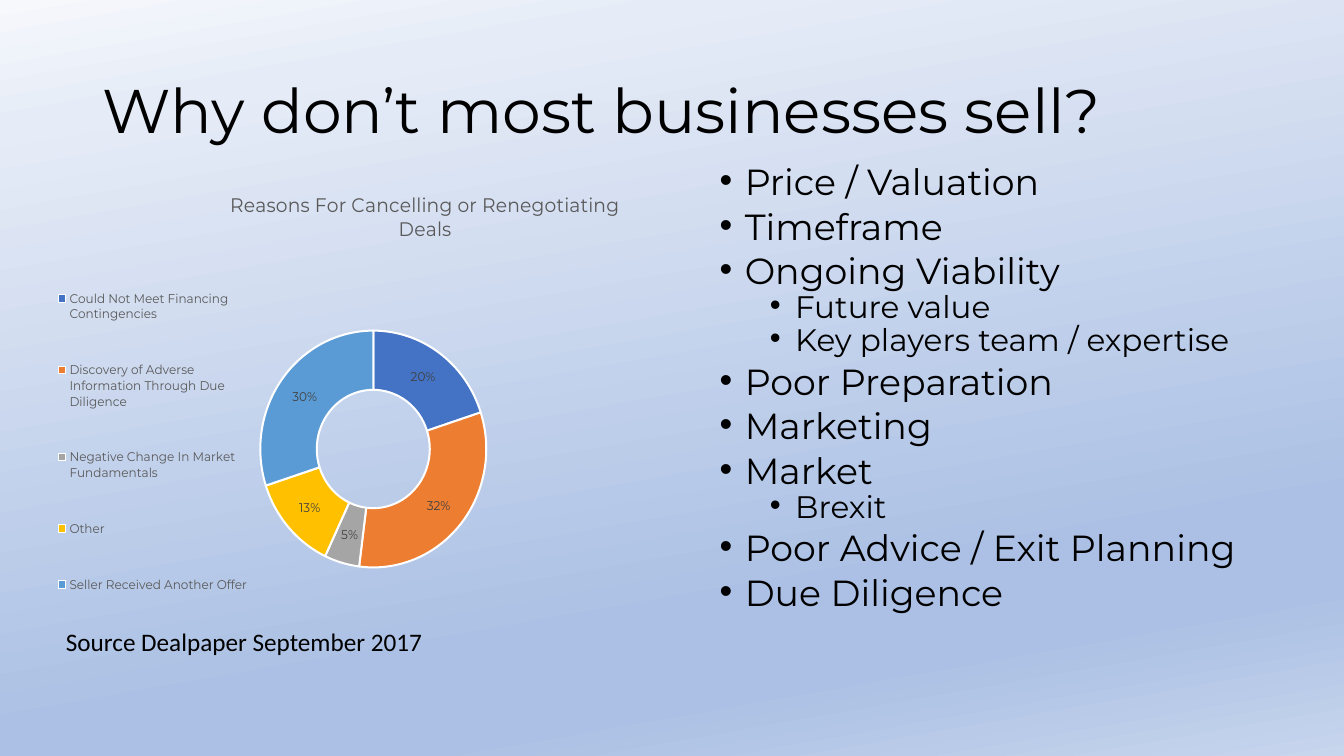
from dataclasses import dataclass

from lxml import etree
from pptx import Presentation
from pptx.chart.data import CategoryChartData
from pptx.dml.color import RGBColor
from pptx.enum.chart import XL_CHART_TYPE, XL_LEGEND_POSITION
from pptx.enum.text import MSO_ANCHOR
from pptx.oxml import parse_xml
from pptx.oxml.ns import nsdecls, qn
from pptx.util import Pt

DOUGHNUT = XL_CHART_TYPE.DOUGHNUT
LEGEND_BOTTOM = XL_LEGEND_POSITION.BOTTOM
MIDDLE = MSO_ANCHOR.MIDDLE
HEADING_FONT = "Montserrat"
SOURCE_FONT = "Calibri"
BLACK, GREY, DARK_GREY, WHITE = "000000", "595959", "404040", "FFFFFF"
BACKGROUND_ANGLE = 80
BACKGROUND_STOPS = [(0, "F6F8FC"), (13, "E6ECF7"), (74, "ABC0E4"),
                    (83, "ABC0E4"), (100, "C7D5ED")]


@dataclass
class Box:
    left: float
    top: float
    width: float
    height: float

    def points(self) -> list:
        return [Pt(v) for v in (self.left, self.top, self.width, self.height)]


@dataclass
class Level:
    size: float
    space_before: float
    indent: float


@dataclass
class Reason:
    text: str
    level: int = 0


@dataclass
class Slice:
    name: str
    share: float
    color: str


LEVELS = [Level(25.9, 10, 18), Level(22.2, 5, 54)]
HANGING = 18

REASONS = [
    Reason("Price / Valuation"),
    Reason("Timeframe"),
    Reason("Ongoing Viability"),
    Reason("Future value", 1),
    Reason("Key players team / expertise", 1),
    Reason("Poor Preparation"),
    Reason("Marketing"),
    Reason("Market"),
    Reason("Brexit", 1),
    Reason("Poor Advice / Exit Planning"),
    Reason("Due Diligence"),
]

SLICES = [
    Slice("Could Not Meet Financing Contingencies", 0.20, "4472C4"),
    Slice("Discovery of Adverse Information Through Due Diligence", 0.32, "ED7D31"),
    Slice("Negative Change In Market Fundamentals", 0.05, "A5A5A5"),
    Slice("Other", 0.13, "FFC000"),
    Slice("Seller Received Another Offer", 0.30, "5B9BD5"),
]


def rgb(color: str) -> RGBColor:
    return RGBColor.from_string(color)


def set_font(font, size: float, color: str = BLACK, name: str = HEADING_FONT) -> None:
    for key, value in {"size": Pt(size), "name": name, "bold": False}.items():
        setattr(font, key, value)
    font.color.rgb = rgb(color)


def add_text_frame(slide, box: Box, wrap: bool = True):
    frame = slide.shapes.add_textbox(*box.points()).text_frame
    frame.word_wrap = wrap
    return frame


def paint_background(slide) -> None:
    fill = slide.background.fill
    fill.gradient()
    gradient = slide.background._cSld.find(".//" + qn("a:gradFill"))
    stops = "".join(
        f'<a:gs pos="{pos * 1000}"><a:srgbClr val="{color}"/></a:gs>'
        for pos, color in BACKGROUND_STOPS)
    gradient.getparent().replace(gradient, parse_xml(
        f'<a:gradFill {nsdecls("a")} rotWithShape="1"><a:gsLst>{stops}</a:gsLst>'
        f'<a:lin ang="{BACKGROUND_ANGLE * 60000}" scaled="0"/></a:gradFill>'))


def add_line(slide, box: Box, text: str, size: float, name: str, wrap: bool):
    frame = add_text_frame(slide, box, wrap)
    paragraph = frame.paragraphs[0]
    paragraph.text = text
    set_font(paragraph.runs[0].font, size, BLACK, name)
    return frame


def add_reasons(slide, box: Box) -> None:
    frame = add_text_frame(slide, box)
    for index, reason in enumerate(REASONS):
        paragraph = frame.paragraphs[0] if index == 0 else frame.add_paragraph()
        level = LEVELS[reason.level]
        properties = paragraph._p.get_or_add_pPr()
        properties.set("marL", str(Pt(level.indent)))
        properties.set("indent", str(-Pt(HANGING)))
        etree.SubElement(properties, qn("a:buFont")).set("typeface", "Arial")
        etree.SubElement(properties, qn("a:buChar")).set("char", "•")
        layout = {
            "text": reason.text,
            "level": reason.level,
            "line_spacing": 0.7,
            "space_before": Pt(level.space_before if index else 0),
        }
        for key, value in layout.items():
            setattr(paragraph, key, value)
        set_font(paragraph.runs[0].font, level.size)


def place(part, before: tuple, **fractions: float) -> None:
    """Give a chart part a manual layout, set ahead of the tags in before."""
    for old in part.findall(qn("c:layout")):
        part.remove(old)
    modes = [("xMode", "edge"), ("yMode", "edge")]
    if part.tag == qn("c:plotArea"):
        modes.insert(0, ("layoutTarget", "inner"))
    entries = "".join(f'<c:{tag} val="{value}"/>'
                      for tag, value in modes + list(fractions.items()))
    layout = parse_xml(f'<c:layout {nsdecls("c")}><c:manualLayout>{entries}'
                       f'</c:manualLayout></c:layout>')
    tags = [qn(tag) for tag in before]
    next(child for child in part if child.tag in tags).addprevious(layout)


def add_deals_chart(slide, box: Box) -> None:
    data = CategoryChartData(number_format="0%")
    data.categories = [part.name for part in SLICES]
    data.add_series("Series 1", [part.share for part in SLICES])
    chart = slide.shapes.add_chart(DOUGHNUT, *box.points(), data).chart
    set_font(chart.font, 10)

    # Chart title
    title = chart.chart_title
    title.include_in_layout = False
    frame = title.text_frame
    frame.text = "Reasons For Cancelling or Renegotiating\nDeals"
    for paragraph in frame.paragraphs:
        set_font(paragraph.runs[0].font, 14, GREY)
    place(title._element, ("c:overlay",), x=0.33, y=0.01)

    # Legend
    chart.has_legend = True
    legend = chart.legend
    legend.position = LEGEND_BOTTOM
    legend.include_in_layout = False
    set_font(legend.font, 9, GREY)
    place(legend._element, ("c:overlay",), x=0.02, y=0.13, w=0.35, h=0.74)

    # Ring and its labels
    plot = chart.plots[0]
    plot.vary_by_categories = True
    plot._element.find(qn("c:holeSize")).set("val", "75")
    place(plot._element.getparent(), ("c:doughnutChart",),
          x=0.39, y=0.17, w=0.41, h=0.69)
    series = plot.series[0]
    for index, part in enumerate(SLICES):
        shape = series.points[index].format
        shape.fill.solid()
        shape.fill.fore_color.rgb = rgb(part.color)
        shape.line.color.rgb = rgb(WHITE)
        shape.line.width = Pt(1.5)
    labels = series.data_labels
    label_format = {"show_value": True, "show_percentage": False,
                    "number_format": "0%", "number_format_is_linked": False}
    for key, value in label_format.items():
        setattr(labels, key, value)
    set_font(labels.font, 9, DARK_GREY)


def main() -> None:
    deck = Presentation()
    deck.slide_width, deck.slide_height = Pt(960), Pt(540)
    slide = deck.slides.add_slide(deck.slide_layouts[6])
    paint_background(slide)

    # Heading
    heading = add_line(slide, Box(66, 28.8, 828, 104.4),
                       "Why don’t most businesses sell?", 44, HEADING_FONT, True)
    heading.vertical_anchor = MIDDLE
    heading.paragraphs[0].line_spacing = 0.9

    # Reasons, source and chart
    add_reasons(slide, Box(506.9, 118.8, 435.6, 339.8))
    add_line(slide, Box(40, 444.2, 286.6, 28.8),
             "Source Dealpaper September 2017", 18, SOURCE_FONT, False)
    add_deals_chart(slide, Box(32.4, 131, 412.6, 368.6))
    deck.save("out.pptx")


if __name__ == "__main__":
    main()
